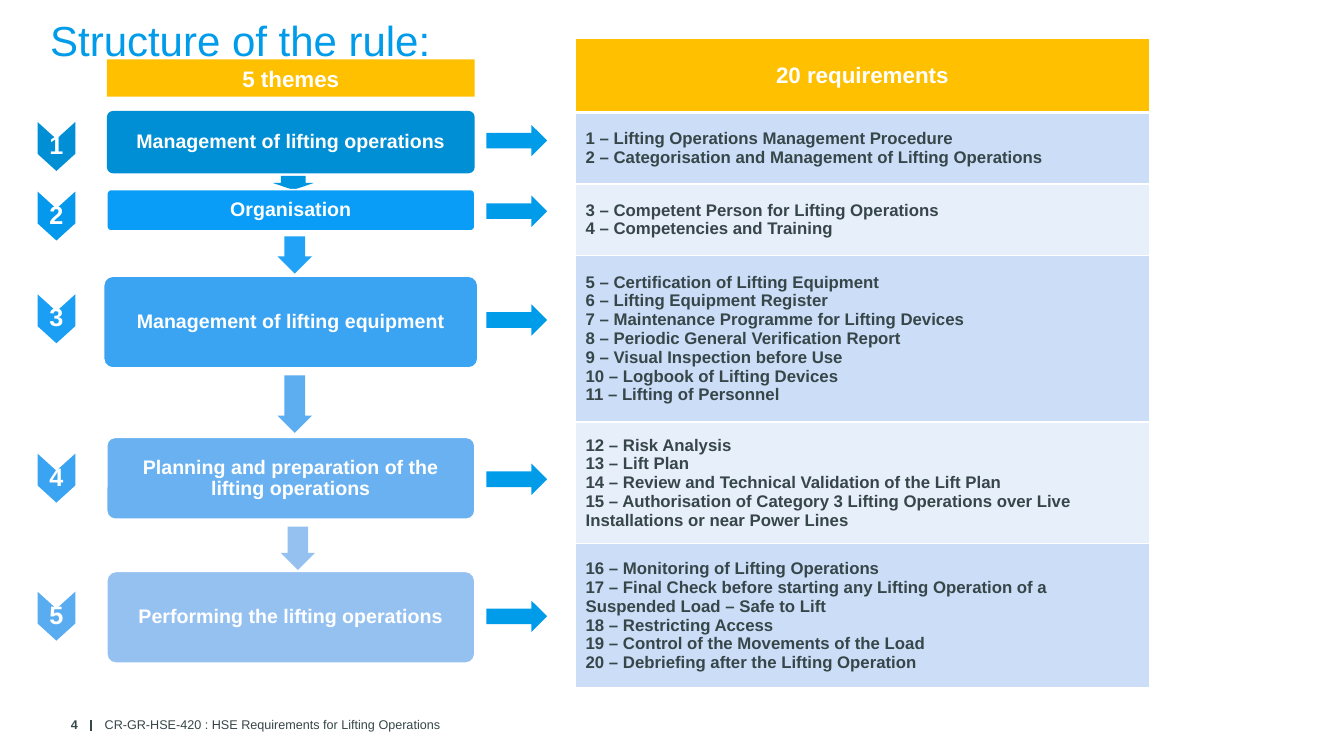
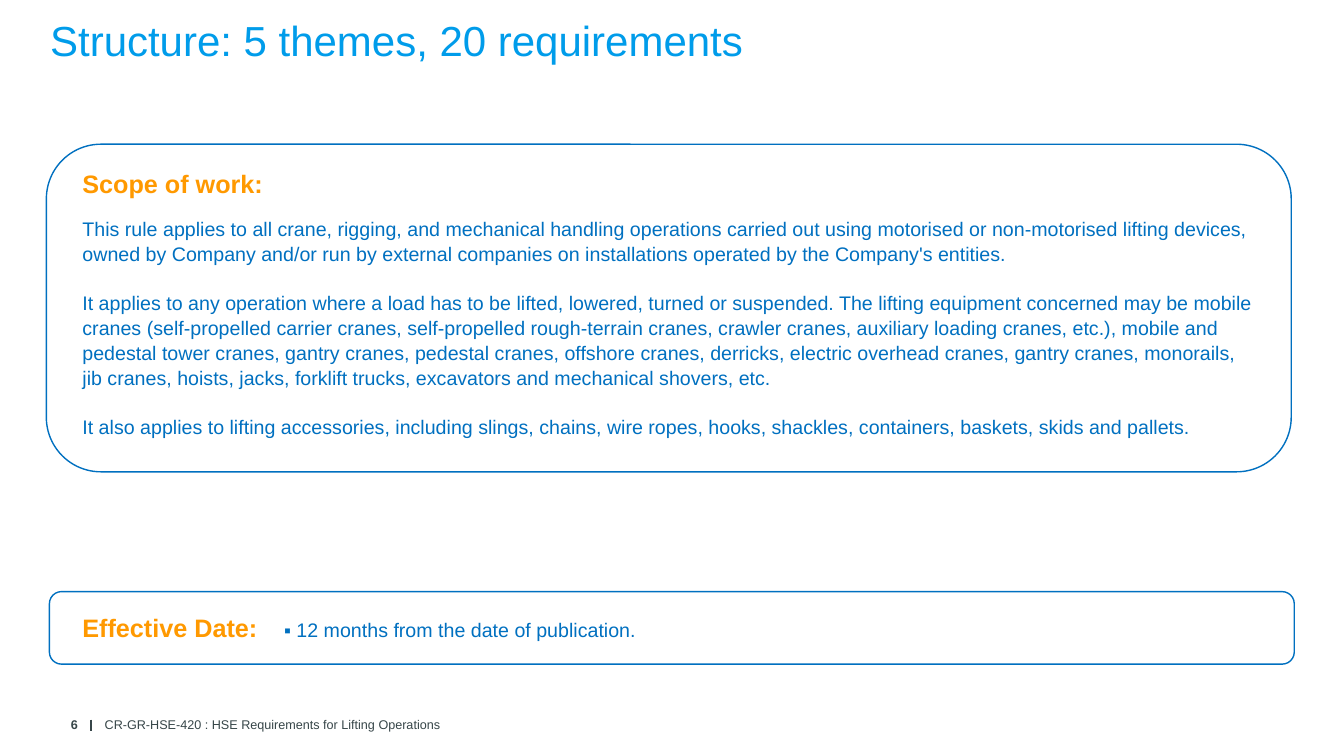
"""Build two slides on the structure and scope of a lifting rule."""
import collections

import lxml.etree
import pptx
import pptx.dml.color
import pptx.enum.shapes
import pptx.enum.text
import pptx.oxml.ns
import pptx.util

Pt = pptx.util.Pt
Shape = pptx.enum.shapes.MSO_SHAPE
Align = pptx.enum.text.PP_ALIGN
Anchor = pptx.enum.text.MSO_ANCHOR
qn = pptx.oxml.ns.qn


class Theme:
    font = "Arial"
    white, ink, blue, deep = "FFFFFF", "374649", "009CEA", "0070C0"
    gold, orange = "FFC000", "FF9900"
    bands = ("CCDEF7", "E7EFFB")
    title, head, badge, band, body, cell, foot = 30, 18, 18, 16, 14, 12, 9
    wide, high = 960, 540


FOOTER = "CR-GR-HSE-420 : HSE Requirements for Lifting Operations"

Step = collections.namedtuple("Step", "text top high extra fill mark mark_top arrow_top")
STEPS = (
    Step("Management of lifting operations", 79.2, 44.6, 0, "008ED4", "008ED4", 87.1, 89.3),
    Step("Organisation", 135.4, 29.5, 0, "099DF7", "0599ED", 136.8, 139.7),
    Step("Management of lifting equipment", 197.3, 65.5, 2.2, "3BA4F2", "1A9FF5", 210.2, 217.4),
    Step("Planning and preparation of the lifting operations",
         312.5, 58.3, 0, "69B1F0", "3BA4F2", 324, 331.2),
    Step("Performing the lifting operations", 408.2, 65.5, 0, "95C1F1", "5AACF1", 422.6, 429.1),
)

Link = collections.namedtuple("Link", "mid top wide high fill")
LINKS = (
    Link(209.5, 125.6, 29.5, 10.1, "0095E0"),
    Link(210.6, 168.9, 24.5, 26.6, "21A2F6"),
    Link(210.6, 268.2, 24.5, 41, "5DADF1"),
    Link(212.8, 376.2, 24.5, 31, "95C1F1"),
)

RULES = (
    (51, ("1 – Lifting Operations Management Procedure",
          "2 – Categorisation and Management of Lifting Operations")),
    (51, ("3 – Competent Person for Lifting Operations",
          "4 – Competencies and Training")),
    (119, ("5 – Certification of Lifting Equipment",
           "6 – Lifting Equipment Register",
           "7 – Maintenance Programme for Lifting Devices",
           "8 – Periodic General Verification Report",
           "9 – Visual Inspection before Use",
           "10 – Logbook of Lifting Devices",
           "11 – Lifting of Personnel")),
    (87, ("12 – Risk Analysis",
          "13 – Lift Plan",
          "14 – Review and Technical Validation of the Lift Plan",
          "15 – Authorisation of Category 3 Lifting Operations over Live "
          "Installations or near Power Lines")),
    (103, ("16 – Monitoring of Lifting Operations",
           "17 – Final Check before starting any Lifting Operation of a "
           "Suspended Load – Safe to Lift",
           "18 – Restricting Access",
           "19 – Control of the Movements of the Load",
           "20 – Debriefing after the Lifting Operation")),
)

SCOPE = (
    "Scope of work:",
    "This rule applies to all crane, rigging, and mechanical handling operations carried out "
    "using motorised or non-motorised lifting devices, owned by Company and/or run by external "
    "companies on installations operated by the Company's entities.",
    "It applies to any operation where a load has to be lifted, lowered, turned or suspended. "
    "The lifting equipment concerned may be mobile cranes (self-propelled carrier cranes, "
    "self-propelled rough-terrain cranes, crawler cranes, auxiliary loading cranes, etc.), "
    "mobile and pedestal tower cranes, gantry cranes, pedestal cranes, offshore cranes, "
    "derricks, electric overhead cranes, gantry cranes, monorails, jib cranes, hoists, jacks, "
    "forklift trucks, excavators and mechanical shovers, etc.",
    "It also applies to lifting accessories, including slings, chains, wire ropes, hooks, "
    "shackles, containers, baskets, skids and pallets.",
)


def tint(name):
    return pptx.dml.color.RGBColor.from_string(name)


def box(left, top, wide, high):
    return Pt(left), Pt(top), Pt(wide), Pt(high)


def style(run, size, color, bold=False):
    run.font.name = Theme.font
    run.font.size = Pt(size)
    run.font.bold = bold
    run.font.color.rgb = tint(color)


def write(frame, text, size, color, bold=False, align=Align.LEFT, space=1.0):
    frame.text = text
    frame.word_wrap = True
    for line in frame.paragraphs:
        line.alignment = align
        line.line_spacing = space
        for run in line.runs:
            style(run, size, color, bold)


def inset(frame, gap):
    frame.margin_left = frame.margin_right = Pt(gap)
    frame.margin_top = frame.margin_bottom = Pt(gap)


def label(slide, area, text, size, color, anchor=Anchor.TOP, **look):
    frame = slide.shapes.add_textbox(*box(*area)).text_frame
    write(frame, text, size, color, **look)
    frame.vertical_anchor = anchor
    return frame


def paint(shape, fill=None, edge=None):
    shape.shadow.inherit = False
    if fill:
        shape.fill.solid()
        shape.fill.fore_color.rgb = tint(fill)
    else:
        shape.fill.background()
    if edge:
        shape.line.color.rgb = tint(edge)
        shape.line.width = Pt(1)
    else:
        shape.line.fill.background()


def draw(slide, kind, area, fill=None, edge=None):
    shape = slide.shapes.add_shape(kind, *box(*area))
    paint(shape, fill, edge)
    return shape


def base(deck, title, number):
    slide = deck.slides.add_slide(deck.slide_layouts[6])
    label(slide, (28.8, 2.9, 765, 41.8), title, Theme.title, Theme.blue, space=1.1)
    label(slide, (17.3, 507.6, 45.4, 20.2), str(number), Theme.foot, Theme.ink,
          Anchor.MIDDLE, bold=True, align=Align.RIGHT)
    label(slide, (67.7, 507.6, 838.8, 20.2), FOOTER, Theme.foot, Theme.ink, Anchor.MIDDLE)
    rule = slide.shapes.add_connector(pptx.enum.shapes.MSO_CONNECTOR.STRAIGHT,
                                      Pt(65), Pt(514), Pt(65), Pt(522))
    rule.line.color.rgb = tint(Theme.ink)
    rule.line.width = Pt(1)
    lxml.etree.SubElement(rule.element.spPr, qn("a:effectLst"))
    return slide


def badge(slide, left, top, wide, high, number, fill):
    notch = high * 0.35
    points = ((wide, high - notch), (wide / 2, high), (0, high - notch),
              (0, 0), (wide / 2, notch), (wide, 0))
    path = slide.shapes.build_freeform(Pt(left + wide), Pt(top))
    path.add_line_segments([(Pt(left + x), Pt(top + y)) for x, y in points])
    shape = path.convert_to_shape()
    paint(shape, fill)
    frame = shape.text_frame
    write(frame, str(number), Theme.badge, Theme.white, True, Align.CENTER, 0.9)
    inset(frame, 0)
    frame.vertical_anchor = Anchor.MIDDLE


def flow(slide, left, top, wide):
    head = draw(slide, Shape.RECTANGLE, (left, top, wide, 26.6), Theme.gold)
    write(head.text_frame, "5 themes", Theme.band, Theme.white, True, Align.CENTER)
    for link in LINKS:
        area = (link.mid - link.wide / 2, link.top, link.wide, link.high)
        arrow = draw(slide, Shape.DOWN_ARROW, area, link.fill)
        arrow.adjustments[0] = 0.6
        arrow.adjustments[1] = 0.5
    for number, step in enumerate(STEPS, 1):
        badge(slide, left - 49.5, step.mark_top, 27, 35, number, step.mark)
        area = (left - step.extra, step.top, wide + 2 * step.extra, step.high)
        card = draw(slide, Shape.ROUNDED_RECTANGLE, area, step.fill,
                    Theme.white if number > 1 else None)
        card.adjustments[0] = 0.1
        write(card.text_frame, step.text, Theme.body, Theme.white, True, Align.CENTER, 0.9)
        inset(card.text_frame, 5)
        card.text_frame.vertical_anchor = Anchor.MIDDLE
        draw(slide, Shape.RIGHT_ARROW, (left + wide + 8.3, step.arrow_top, 43.4, 22.3),
             Theme.blue)


def border(cell, base_width):
    props = cell._tc.get_or_add_tcPr()
    for spot, side in enumerate(("lnL", "lnR", "lnT", "lnB")):
        width = base_width if side == "lnB" else 1
        line = lxml.etree.Element(qn("a:" + side), w=str(Pt(width)))
        fill = lxml.etree.SubElement(line, qn("a:solidFill"))
        lxml.etree.SubElement(fill, qn("a:srgbClr"), val=Theme.white)
        props.insert(spot, line)


def fill_cell(cell, text, size, color, fill, align=Align.LEFT, base_width=1):
    write(cell.text_frame, text, size, color, True, align)
    cell.vertical_anchor = Anchor.MIDDLE
    cell.fill.solid()
    cell.fill.fore_color.rgb = tint(fill)
    border(cell, base_width)


def rules(slide, left, top, wide):
    highs = [53] + [high for high, lines in RULES]
    area = box(left, top, wide, sum(highs))
    table = slide.shapes.add_table(len(highs), 1, *area).table
    for row, high in zip(table.rows, highs):
        row.height = Pt(high)
    fill_cell(table.cell(0, 0), "20 requirements", Theme.band, Theme.white,
              Theme.gold, Align.CENTER, 3)
    for index, (high, lines) in enumerate(RULES):
        fill_cell(table.cell(index + 1, 0), "\n".join(lines), Theme.cell, Theme.ink,
                  Theme.bands[index % 2])


def scope(slide, left, top, wide, high):
    draw(slide, Shape.ROUNDED_RECTANGLE, (left, top, wide, high), edge=Theme.deep)
    frame = label(slide, (left + 18.7, top + 12.2, 855.4, 193.7), "\n".join(SCOPE),
                  Theme.body, Theme.deep, space=1.07)
    head, first, *others = frame.paragraphs
    head.space_after = Pt(12)
    style(head.runs[0], Theme.head, Theme.orange, True)
    for line in others:
        line.space_before = Pt(16.7)


def date(slide, left, top, wide, high):
    draw(slide, Shape.ROUNDED_RECTANGLE, (left, top, wide, high), edge=Theme.deep)
    frame = label(slide, (left + 16.5, top + 9.4, 855.4, 28.8), "Effective Date: ",
                  Theme.head, Theme.orange, bold=True, space=1.07)
    line = frame.paragraphs[0]
    tabs = lxml.etree.SubElement(line._p.get_or_add_pPr(), qn("a:tabLst"))
    lxml.etree.SubElement(tabs, qn("a:tab"), pos=str(Pt(144)), algn="l")
    run = line.add_run()
    run.text = "\t▪ 12 months from the date of publication."
    style(run, Theme.body, Theme.deep)


def main():
    deck = pptx.Presentation()
    deck.slide_width, deck.slide_height = Pt(Theme.wide), Pt(Theme.high)
    first = base(deck, "Structure of the rule:", 4)
    flow(first, 76.3, 42.5, 262.8)
    rules(first, 411.1, 27.4, 409.7)
    second = base(deck, "Structure: 5 themes, 20 requirements", 6)
    scope(second, 33.1, 103, 889.2, 234)
    date(second, 35.3, 422.6, 889.2, 51.8)
    deck.save("out.pptx")


if __name__ == "__main__":
    main()
